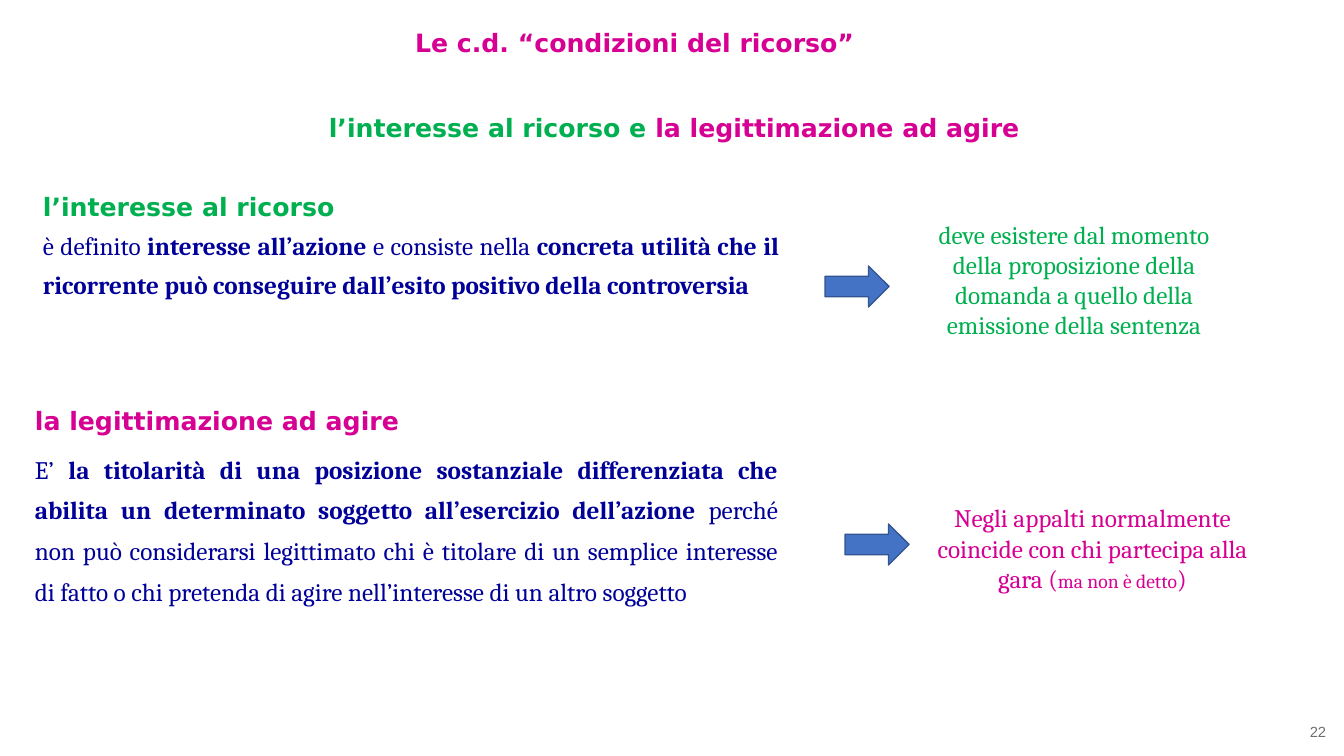
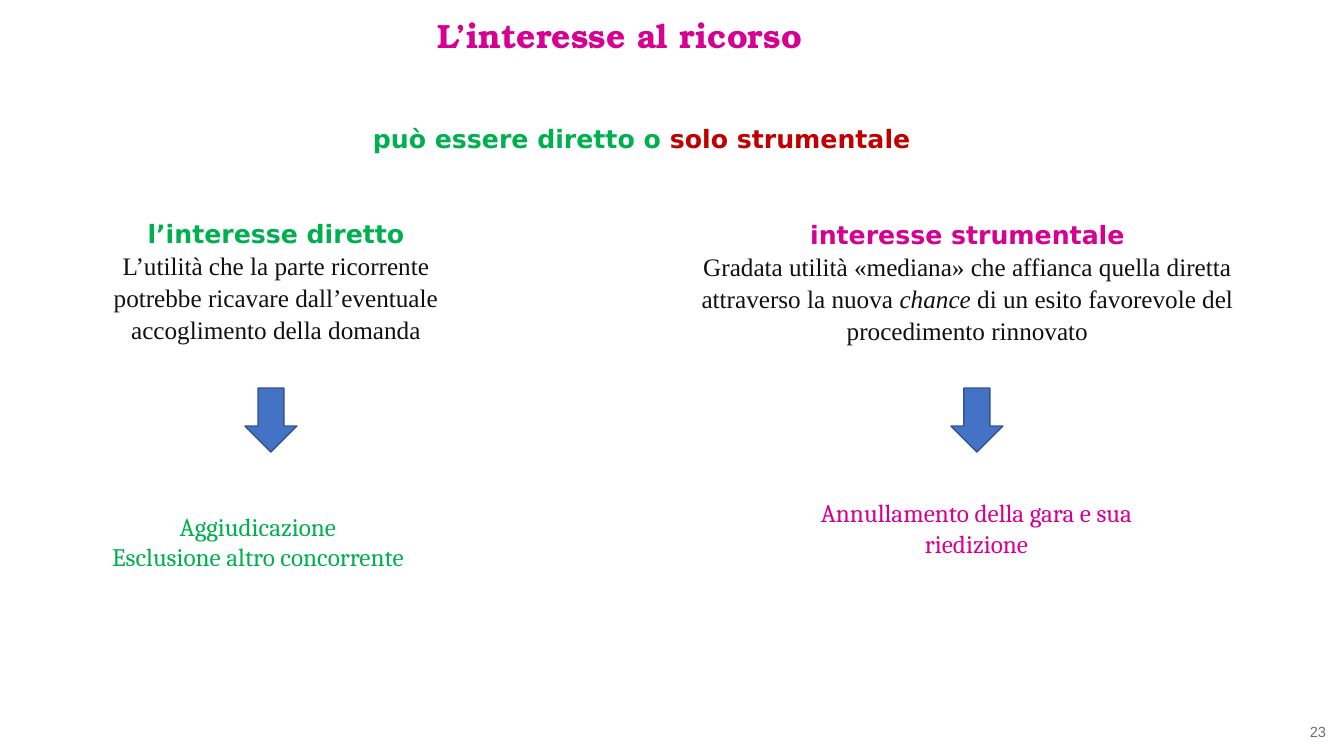
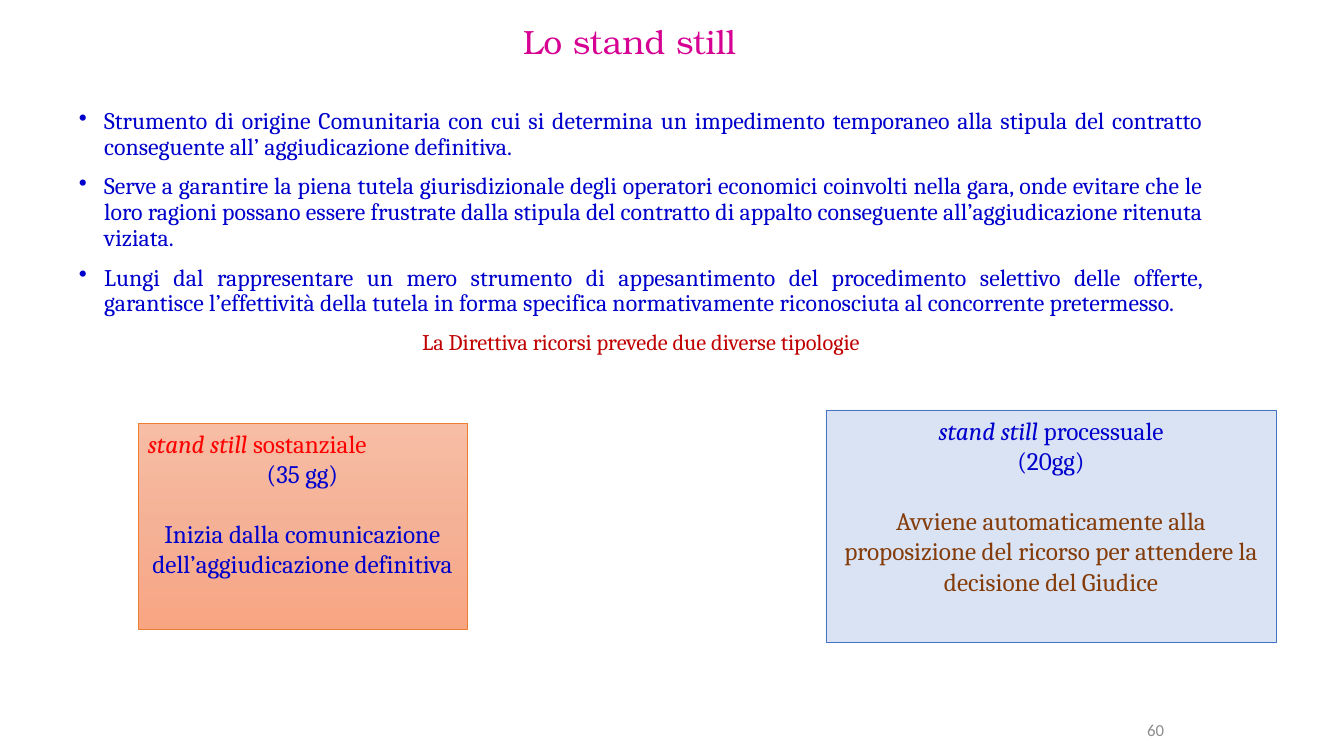
from copy import deepcopy

from lxml import etree
from pptx import Presentation
from pptx import util as u
from pptx.dml.color import RGBColor
from pptx.enum import shapes, text
from pptx.oxml.ns import qn

EMU_PER_PX = 914400 / 100.8
TITLE_ONLY = 5

MAGENTA, GREEN, NAVY, BLUE = "D60093", "00B050", "000099", "0000CC"
DARK_RED, RED, BROWN, INK = "C00000", "FF0000", "843C0B", "111111"

LEFT, CENTER = text.PP_ALIGN.LEFT, text.PP_ALIGN.CENTER
RIGHT, JUSTIFY = text.PP_ALIGN.RIGHT, text.PP_ALIGN.JUSTIFY
TOP, MIDDLE = text.MSO_ANCHOR.TOP, text.MSO_ANCHOR.MIDDLE
RIGHT_ARROW, DOWN_ARROW = shapes.MSO_SHAPE.RIGHT_ARROW, shapes.MSO_SHAPE.DOWN_ARROW


def px(length):
    return u.Emu(round(length * EMU_PER_PX))


def rgb(colour):
    return RGBColor.from_string(colour)


def style(name, colour, size=18, **extra):
    return dict(name=name, colour=colour, size=u.Pt(size), **extra)


def heading(colour):
    return style("DejaVu Sans", colour, bold=True)


def cambria(colour, size=18, **extra):
    return style("Cambria", colour, size, **extra)


def para(*runs, **layout):
    """Pair (text, style) runs with their paragraph settings."""
    return runs, layout


class Deck:
    def __init__(self):
        self.prs = Presentation()
        self.prs.slide_width, self.prs.slide_height = px(1344), px(756)
        self.slide = None

    def new_slide(self, title, box, font):
        self.slide = self.prs.slides.add_slide(self.prs.slide_layouts[TITLE_ONLY])
        holder = self.slide.shapes.title
        holder.left, holder.top, holder.width, holder.height = map(px, box)
        self.set_text(holder, [para((title, font))])

    def set_text(self, shape, paragraphs, anchor=TOP):
        frame = shape.text_frame
        for key, value in dict(word_wrap=True, vertical_anchor=anchor,
                               auto_size=text.MSO_AUTO_SIZE.NONE).items():
            setattr(frame, key, value)
        for index, (runs, layout) in enumerate(paragraphs):
            paragraph = frame.add_paragraph() if index else frame.paragraphs[0]
            layout = dict(layout)
            if layout.pop("bullet", False):
                self.add_bullet(paragraph)
            for key, value in {"alignment": LEFT, **layout}.items():
                setattr(paragraph, key, value)
            for words, font in runs:
                run = paragraph.add_run()
                run.text = words
                for key, value in font.items():
                    if key == "colour":
                        run.font.color.rgb = rgb(value)
                    else:
                        setattr(run.font, key, value)

    def add_bullet(self, paragraph):
        props = paragraph._p.get_or_add_pPr()
        indent = u.Inches(0.25)
        props.set("marL", str(indent))
        props.set("indent", str(-indent))
        etree.SubElement(props, qn("a:buChar")).set("char", "•")

    def text(self, box, *paragraphs, anchor=TOP):
        self.set_text(self.slide.shapes.add_textbox(*map(px, box)), paragraphs, anchor)

    def shape(self, kind, box, fill, line, line_width):
        """Draw a preset shape; a list of fill colours makes a downward gradient."""
        shape = self.slide.shapes.add_shape(kind, *map(px, box))
        shape.shadow.inherit = False
        if isinstance(fill, list):
            self.fill_gradient(shape, fill)
        else:
            shape.fill.solid()
            shape.fill.fore_color.rgb = rgb(fill)
        shape.line.color.rgb = rgb(line)
        shape.line.width = u.Pt(line_width)
        return shape

    def fill_gradient(self, shape, colours):
        shape.fill.gradient()
        shape.fill.gradient_angle = 270
        stops = shape._element.spPr.find(".//" + qn("a:gsLst"))
        while len(stops) < len(colours):
            stops.append(deepcopy(stops[0]))
        for index, stop in enumerate(shape.fill.gradient_stops):
            stop.position = index / (len(colours) - 1)
            stop.color.rgb = rgb(colours[index])

    def arrow(self, kind, box):
        self.shape(kind, box, "4472C4", "325491", 1)

    def panel(self, box, fill, line, *paragraphs):
        panel = self.shape(shapes.MSO_SHAPE.RECTANGLE, box, fill, line, 0.5)
        self.set_text(panel, paragraphs)

    def number(self, value, box=(1179, 718, 157, 38),
               font=style("Arial", "706F6F", 10.5), anchor=TOP):
        self.text(box, para((value, font), alignment=RIGHT), anchor=anchor)


def conditions_slide(deck):
    deck.new_slide("Le c.d. “condizioni del ricorso”", (405, 22, 469, 40),
                   heading(MAGENTA))
    deck.text((319, 92, 893, 49),
              para(("l’interesse al ricorso e ", heading(GREEN)),
                   ("la legittimazione ad agire", heading(MAGENTA)),
                   line_spacing=1.5))
    plain, strong = cambria(NAVY), cambria(NAVY, bold=True)
    deck.text((33, 171, 756, 171),
              para(("l’interesse al ricorso", heading(GREEN)),
                   alignment=JUSTIFY, line_spacing=1.5),
              para(("è definito ", plain), ("interesse all’azione", strong),
                   (" e consiste nella ", plain),
                   ("concreta utilità che il ricorrente può conseguire "
                    "dall’esito positivo della controversia", strong),
                   alignment=JUSTIFY, line_spacing=u.Pt(28)))
    deck.text((25, 385, 763, 334),
              para(("la legittimazione ad agire", heading(MAGENTA)),
                   alignment=JUSTIFY, line_spacing=1.5),
              para(("E’ ", plain),
                   ("la titolarità di una posizione sostanziale differenziata che "
                    "abilita un determinato soggetto all’esercizio dell’azione ", strong),
                   ("perché non può considerarsi legittimato chi è titolare di un "
                    "semplice interesse di fatto o chi pretenda di agire "
                    "nell’interesse di un altro soggetto", plain),
                   alignment=JUSTIFY, line_spacing=u.Pt(29), space_before=u.Pt(6)))
    deck.arrow(RIGHT_ARROW, (825, 266, 64, 41))
    deck.arrow(RIGHT_ARROW, (845, 524, 64, 41))
    deck.text((909, 229, 330, 101),
              para(("deve esistere dal momento della proposizione della domanda "
                    "a quello della emissione della sentenza", cambria(GREEN)),
                   alignment=CENTER), anchor=MIDDLE)
    deck.text((922, 480, 341, 136),
              para(("Negli appalti normalmente coincide con chi partecipa alla gara (",
                    cambria(MAGENTA)),
                   ("ma non è detto", cambria(MAGENTA, 14)), (")", cambria(MAGENTA)),
                   alignment=CENTER), anchor=MIDDLE)
    deck.number("22")


def interest_slide(deck):
    deck.new_slide("L’interesse al ricorso", (427, 10, 400, 50),
                   style("TeX Gyre Bonum", MAGENTA, 24, bold=True))
    deck.text((363, 103, 893, 49),
              para(("può essere diretto o ", heading(GREEN)),
                   ("solo strumentale", heading(DARK_RED)), line_spacing=1.5))
    body = style("Times New Roman", INK)
    interests = [
        ((98, 198, 356, 152), "l’interesse diretto", GREEN,
         [("L’utilità che la parte ricorrente potrebbe ricavare dall’eventuale "
           "accoglimento della domanda", body)]),
        ((672, 199, 591, 151), "interesse strumentale", MAGENTA,
         [("Gradata utilità «mediana» che affianca quella diretta attraverso "
           "la nuova ", body), ("chance", dict(body, italic=True)),
          (" di un esito favorevole del procedimento rinnovato", body)]),
    ]
    for box, name, colour, definition in interests:
        deck.text(box,
                  para((name, heading(colour)), alignment=CENTER, line_spacing=1.5),
                  para(*definition, alignment=CENTER, line_spacing=u.Pt(23)))
    for left in (245, 951):
        deck.arrow(DOWN_ARROW, (left, 388, 52, 64))
    outcomes = [
        ((93, 491, 330, 101), GREEN, ["Aggiudicazione", "Esclusione altro concorrente"]),
        ((806, 460, 341, 136), MAGENTA, ["Annullamento della gara e sua riedizione"]),
    ]
    for box, colour, lines in outcomes:
        deck.text(box, *[para((line, cambria(colour)), alignment=CENTER)
                         for line in lines], anchor=MIDDLE)
    deck.number("23")


def stand_still_slide(deck):
    deck.new_slide("Lo stand still", (513, 16, 254, 50),
                   style("TeX Gyre Bonum", MAGENTA, 24))
    points = [
        "Strumento di origine Comunitaria con cui si determina un impedimento "
        "temporaneo alla stipula del contratto conseguente all’ aggiudicazione "
        "definitiva.",
        "Serve a garantire la piena tutela giurisdizionale degli operatori economici "
        "coinvolti nella gara, onde evitare che le loro ragioni possano essere "
        "frustrate dalla stipula del contratto di appalto conseguente "
        "all’aggiudicazione ritenuta viziata.",
        "Lungi dal rappresentare un mero strumento di appesantimento del procedimento "
        "selettivo delle offerte, garantisce l’effettività della tutela in forma "
        "specifica normativamente riconosciuta al concorrente pretermesso.",
    ]
    bullets = [para((point, cambria(BLUE, 17)), bullet=True, alignment=JUSTIFY,
                    line_spacing=0.9, space_before=u.Pt(10 if index else 0))
               for index, point in enumerate(points)]
    deck.text((69, 104, 1144, 305), *bullets,
              para(("La Direttiva ricorsi prevede due diverse tipologie",
                    cambria(DARK_RED, 16)),
                   alignment=CENTER, line_spacing=0.9, space_before=u.Pt(10)))
    gap = u.Pt(21.5)
    deck.panel((138, 423, 329, 206), ["F7BDA5", "F5B196", "F8A582"], "ED7D31",
               para(("stand still", cambria(RED, italic=True)),
                    (" sostanziale", cambria(RED))),
               para(("(35 gg)", cambria(BLUE)), alignment=CENTER),
               para(("Inizia dalla comunicazione", cambria(BLUE)),
                    alignment=CENTER, space_before=gap),
               para(("dell’aggiudicazione definitiva", cambria(BLUE)),
                    alignment=CENTER))
    deck.panel((826, 410, 450, 232), "DAE3F3", "4472C4",
               para(("stand still", cambria(BLUE, italic=True)),
                    (" processuale", cambria(BLUE)), alignment=CENTER),
               para(("(20gg)", cambria(BLUE)), alignment=CENTER),
               para(("Avviene automaticamente alla proposizione del ricorso per "
                     "attendere la decisione del Giudice", cambria(BROWN)),
                    alignment=CENTER, space_before=gap))
    deck.number("60", (964, 705, 210, 50), style("Calibri", "8C8C8C", 12), MIDDLE)


def main():
    deck = Deck()
    conditions_slide(deck)
    interest_slide(deck)
    stand_still_slide(deck)
    deck.prs.save("out.pptx")


if __name__ == "__main__":
    main()
